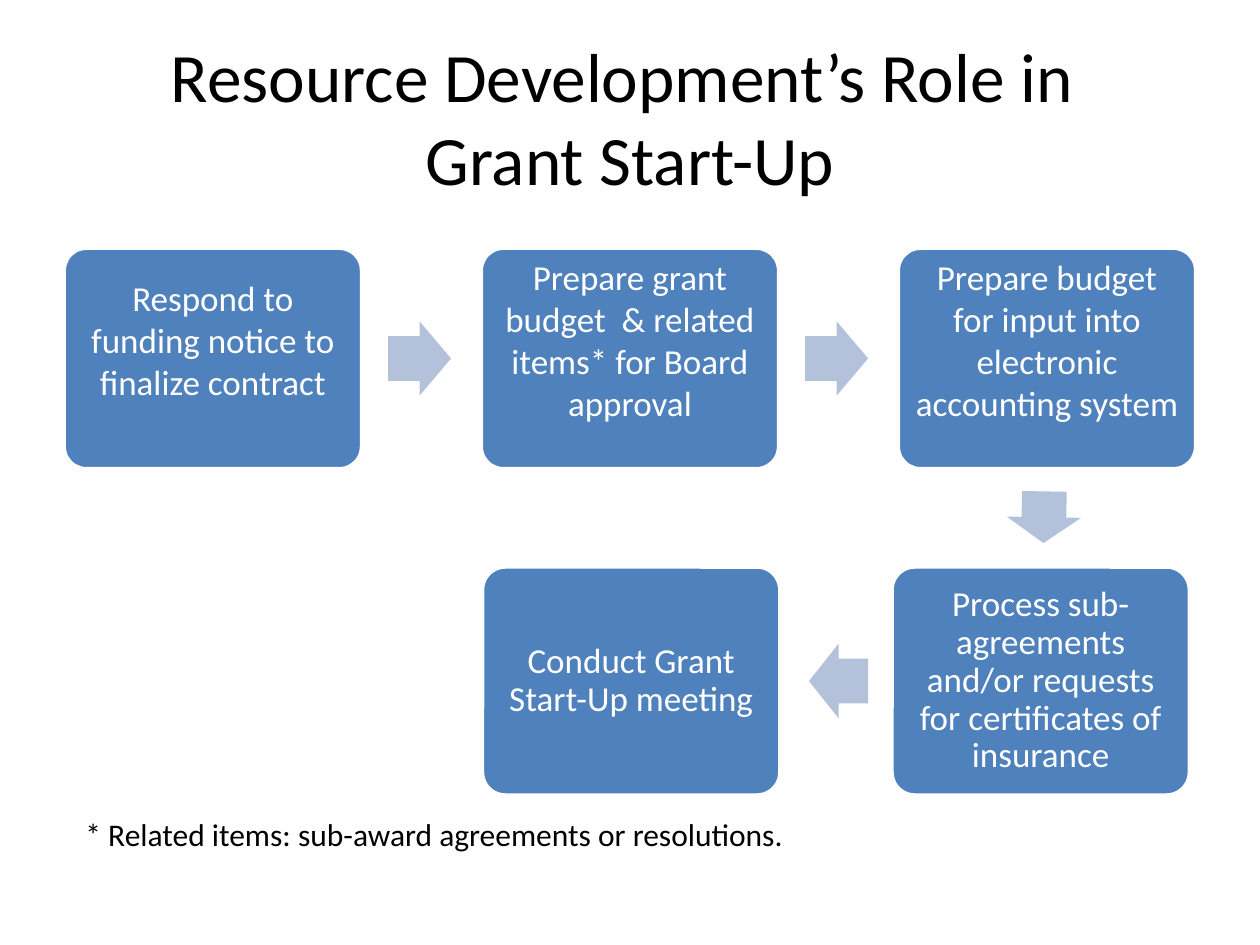
import dataclasses

import pptx
import pptx.dml.color
import pptx.enum.shapes
import pptx.enum.text
import pptx.util

Shape = pptx.enum.shapes.MSO_SHAPE
Align = pptx.enum.text.PP_ALIGN
Anchor = pptx.enum.text.MSO_ANCHOR
AutoSize = pptx.enum.text.MSO_AUTO_SIZE


@dataclasses.dataclass(frozen=True)
class Theme:
    font: str = "Calibri"
    ink: str = "000000"
    paper: str = "FFFFFF"
    step: str = "4F81BD"
    arrow: str = "B3C1DB"
    title_size: float = 39.6
    step_size: float = 20
    note_size: float = 18


class FlowSlide:
    COLUMNS = 100
    ROWS = 75

    def __init__(self, deck, theme):
        self.theme = theme
        self.column = deck.slide_width / self.COLUMNS
        self.row = deck.slide_height / self.ROWS
        self.slide = deck.slides.add_slide(deck.slide_layouts[5])

    def area(self, left, top, width, height):
        return (round(left * self.column), round(top * self.row),
                round(width * self.column), round(height * self.row))

    def color(self, value):
        return pptx.dml.color.RGBColor.from_string(value)

    def set_text(self, frame, text, size, color, align, spacing=None):
        frame.word_wrap = True
        frame.text = text
        for paragraph in frame.paragraphs:
            paragraph.alignment = align
            paragraph.line_spacing = spacing
            for run in paragraph.runs:
                run.font.name = self.theme.font
                run.font.size = pptx.util.Pt(size)
                run.font.color.rgb = self.color(color)

    def title(self, text, *place):
        heading = self.slide.shapes.title
        heading.left, heading.top, heading.width, heading.height = self.area(*place)
        heading.text_frame.auto_size = AutoSize.NONE
        heading.text_frame.vertical_anchor = Anchor.MIDDLE
        self.set_text(heading.text_frame, text, self.theme.title_size,
                      self.theme.ink, Align.CENTER)

    def block(self, kind, fill, *place):
        block = self.slide.shapes.add_shape(kind, *self.area(*place))
        block.shadow.inherit = False
        block.fill.solid()
        block.fill.fore_color.rgb = self.color(fill)
        return block

    def step(self, text, *place, insets=(0.08, 0.08), spacing=None):
        step = self.block(Shape.ROUNDED_RECTANGLE, self.theme.step, *place)
        step.adjustments[0] = 0.1
        step.line.color.rgb = self.color(self.theme.paper)
        step.line.width = pptx.util.Pt(2)
        frame = step.text_frame
        frame.margin_left = frame.margin_right = pptx.util.Inches(0.08)
        frame.margin_top, frame.margin_bottom = map(pptx.util.Inches, insets)
        frame.vertical_anchor = Anchor.MIDDLE
        self.set_text(frame, text, self.theme.step_size, self.theme.paper,
                      Align.CENTER, spacing)

    def arrow(self, *place, rotation=0):
        arrow = self.block(Shape.RIGHT_ARROW, self.theme.arrow, *place)
        arrow.adjustments[0] = 0.6
        arrow.adjustments[1] = 0.5
        arrow.rotation = rotation
        arrow.line.fill.background()

    def note(self, text, *place):
        note = self.slide.shapes.add_textbox(*self.area(*place))
        self.set_text(note.text_frame, text, self.theme.note_size,
                      self.theme.ink, Align.LEFT)


def main():
    deck = pptx.Presentation()
    deck.slide_width = pptx.util.Inches(10)
    deck.slide_height = pptx.util.Inches(7.5)
    flow = FlowSlide(deck, Theme())

    flow.title("Resource Development’s Role in \vGrant Start-Up", 5, 3, 90, 12.5)

    first_left, pitch, step_width = 5.1, 33.1, 23.6
    preparation = (
        "Respond to funding notice to finalize contract",
        "Prepare grant budget  & related items* for Board approval",
        "Prepare budget for input into electronic accounting system",
    )
    for index, task in enumerate(preparation):
        left = first_left + index * pitch
        flow.step(task, left, 19.7, step_width, 17.5, insets=(0, 0.3))
        if index < len(preparation) - 1:
            flow.arrow(left + 25.7, 25.5, 5, 5.9)

    flow.arrow(80.8, 38.1, 4.1, 5.9, rotation=91)
    completion = (
        ("Process sub-agreements and/or requests for certificates of insurance", 70.8),
        ("Conduct Grant Start-Up meeting", 38.3),
    )
    for task, left in completion:
        flow.step(task, left, 45, step_width, 18.1, spacing=0.9)
    flow.arrow(64.2, 51.1, 4.7, 5.9, rotation=180)

    flow.note("* Related items: sub-award agreements or resolutions.", 5.8, 64.2, 87.5, 4)
    deck.save("out.pptx")


if __name__ == "__main__":
    main()
